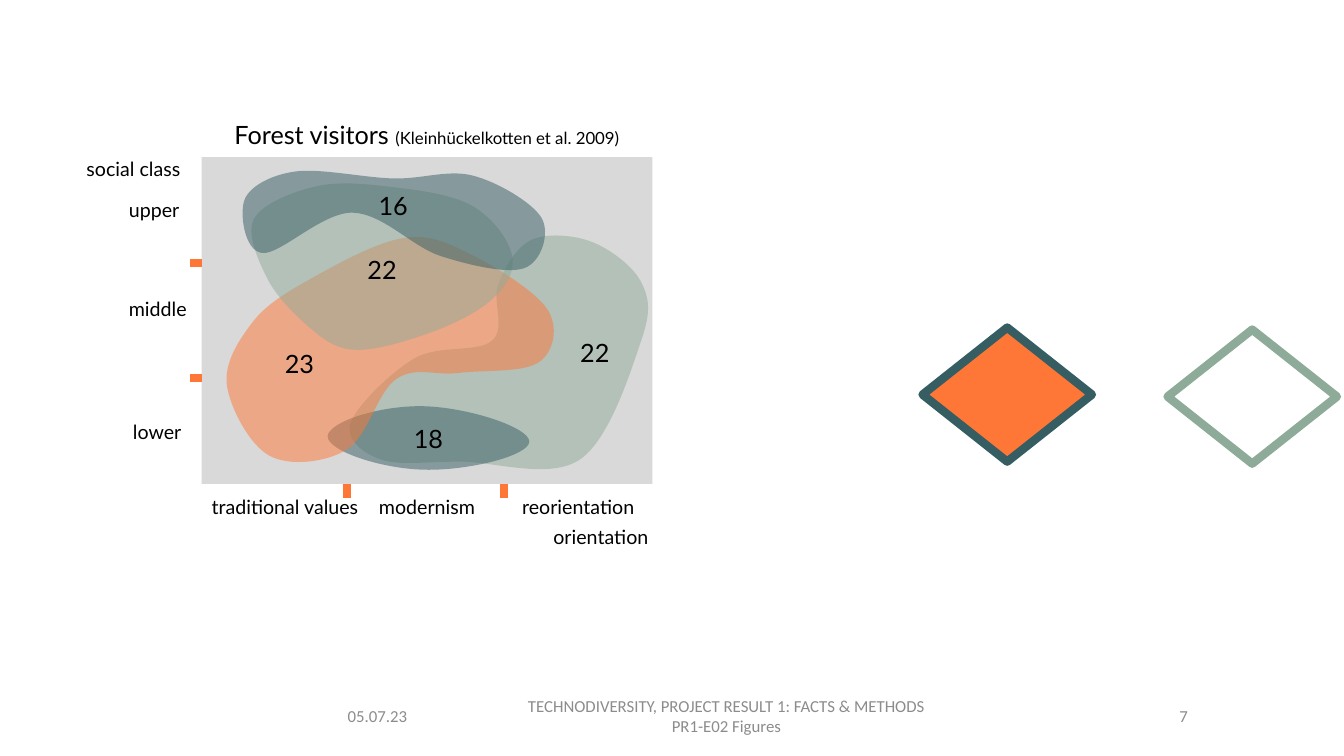
from dataclasses import dataclass

import lxml.etree
import pptx
import pptx.dml.color
import pptx.enum.shapes
import pptx.enum.text
import pptx.oxml.ns
import pptx.util

COLUMNS, ROWS = 1333, 750
STEP = pptx.util.Inches(0.01)
ORANGE, TEAL, SAGE = "FF7737", "355D62", "8EAB99"
BLACK, WHITE, GREY, PANEL_GREY = "000000", "FFFFFF", "8C8C8C", "D9D9D9"
LEFT, TOP, WIDTH, HEIGHT = 200, 156, 447, 324
AXIS_ROW = 486
ALIGN = pptx.enum.text.PP_ALIGN
ANCHOR = pptx.enum.text.MSO_ANCHOR
SHAPE = pptx.enum.shapes.MSO_SHAPE
Point = tuple[float, float]


@dataclass
class Label:
    text: str
    column: int
    row: int
    width: int = 167
    height: int = 34
    size: int = 14
    font: str = "Lato"
    color: str = BLACK
    align: ALIGN = ALIGN.LEFT
    anchor: ANCHOR = ANCHOR.TOP


@dataclass
class Region:
    number: str
    center: Point
    color: str
    knots: list[Point]
    tension: float = 6


@dataclass
class Block:
    shape: SHAPE
    column: int
    row: int
    width: int
    height: int
    fill: str
    line: str | None = None


@dataclass
class Tick:
    column: int
    row: int
    across: int
    down: int


def steps(count: float) -> pptx.util.Emu:
    return pptx.util.Emu(round(count * STEP))


def color(code: str) -> pptx.dml.color.RGBColor:
    return pptx.dml.color.RGBColor.from_string(code)


def tag(name: str) -> str:
    return pptx.oxml.ns.qn(name)


def style_paragraph(para, size: int, font: str, code: str, align) -> None:
    para.alignment = align
    para.font.size = pptx.util.Pt(size)
    para.font.name = font
    para.font.color.rgb = color(code)


def draw_label(page, label: Label) -> None:
    box = page.shapes.add_textbox(
        steps(label.column), steps(label.row), steps(label.width), steps(label.height))
    frame = box.text_frame
    frame.word_wrap = True
    frame.vertical_anchor = label.anchor
    frame.text = label.text
    for para in frame.paragraphs:
        style_paragraph(para, label.size, label.font, label.color, label.align)


def draw_block(page, block: Block) -> None:
    shape = page.shapes.add_shape(
        block.shape, steps(block.column), steps(block.row),
        steps(block.width), steps(block.height))
    shape.shadow.inherit = False
    shape.fill.solid()
    shape.fill.fore_color.rgb = color(block.fill)
    if block.line:
        shape.line.color.rgb = color(block.line)
        shape.line.width = pptx.util.Pt(6)
    else:
        shape.line.fill.background()


def smooth_points(knots: list[Point], tension: float) -> list[Point]:
    points = []
    for index, start in enumerate(knots):
        before = knots[index - 1]
        end = knots[(index + 1) % len(knots)]
        after = knots[(index + 2) % len(knots)]
        points.append(tuple(s + (e - b) / tension for b, s, e in zip(before, start, end)))
        points.append(tuple(e - (a - s) / tension for s, e, a in zip(start, end, after)))
        points.append(end)
    return points


def curve_outline(shape) -> None:
    edges = list(shape.element.iter(tag("a:lnTo")))
    for group in zip(*[iter(edges)] * 3):
        curve = lxml.etree.Element(tag("a:cubicBezTo"))
        group[0].addprevious(curve)
        for edge in group:
            curve.append(edge[0])
            edge.getparent().remove(edge)


def draw_region(page, region: Region) -> None:
    builder = page.shapes.build_freeform(*region.knots[0], scale=STEP)
    builder.add_line_segments(smooth_points(region.knots, region.tension))
    shape = builder.convert_to_shape()
    curve_outline(shape)
    shape.shadow.inherit = False
    shape.line.fill.background()
    shape.fill.solid()
    shape.fill.fore_color.rgb = color(region.color)
    tint = next(shape.element.spPr.iter(tag("a:srgbClr")))
    lxml.etree.SubElement(tint, tag("a:alpha"), val="50000")

    across = 2 * steps(region.center[0]) - 2 * shape.left - shape.width
    down = 2 * steps(region.center[1]) - 2 * shape.top - shape.height
    frame = shape.text_frame
    frame.margin_left, frame.margin_right = max(across, 0), max(-across, 0)
    frame.margin_top, frame.margin_bottom = max(down, 0), max(-down, 0)
    frame.vertical_anchor = ANCHOR.MIDDLE
    frame.text = region.number
    style_paragraph(frame.paragraphs[0], 18, "Lato", BLACK, ALIGN.CENTER)


def draw_tick(page, tick: Tick) -> None:
    line = page.shapes.add_connector(
        pptx.enum.shapes.MSO_CONNECTOR.STRAIGHT, steps(tick.column), steps(tick.row),
        steps(tick.column + tick.across), steps(tick.row + tick.down))
    line.line.color.rgb = color(ORANGE)
    line.line.width = pptx.util.Pt(6)
    lxml.etree.SubElement(line.element.spPr, tag("a:effectLst"))


def draw_title(page) -> None:
    title = page.shapes.title
    title.left, title.top = steps(LEFT), steps(113)
    title.width, title.height = steps(WIDTH), steps(40)
    frame = title.text_frame
    frame.auto_size = pptx.enum.text.MSO_AUTO_SIZE.NONE
    frame.vertical_anchor = ANCHOR.TOP
    para = frame.paragraphs[0]
    style_paragraph(para, 18, "Lato", BLACK, ALIGN.CENTER)
    for text, size in (("Forest visitors ", 18), ("(Kleinhückelkotten et al. 2009)", 12)):
        span = para.add_run()
        span.text = text
        span.font.size = pptx.util.Pt(size)


LABELS = [
    Label("social class", 76, 151), Label("upper", 118, 191),
    Label("middle", 118, 290), Label("lower", 122, 412),
    Label("traditional values", LEFT, AXIS_ROW), Label("modernism", 366, AXIS_ROW),
    Label("reorientation", 508, AXIS_ROW), Label("orientation", 539, 516),
]
FOOTERS = [
    ("05.07.23", 335, 134, ALIGN.LEFT),
    ("TECHNODIVERSITY, PROJECT RESULT 1: FACTS & METHODS\nPR1-E02 Figures",
     486, 469, ALIGN.CENTER),
    ("7", 977, 211, ALIGN.RIGHT),
]
REGIONS = [
    Region("22", (590, 350), SAGE, [
        (412, 355), (348, 419), (378, 456), (457, 458), (575, 456), (636, 338),
        (636, 280), (587, 240), (527, 238), (494, 283), (488, 338)]),
    Region("18", (425, 435), TEAL, [
        (420, 403), (325, 433), (421, 466), (525, 438)], 4.5),
    Region("23", (297, 361), ORANGE, [
        (251, 319), (311, 275), (401, 236), (470, 254), (543, 307), (535, 359),
        (455, 370), (393, 376), (344, 446), (267, 452), (225, 382)]),
    Region("22", (379, 267), SAGE, [
        (265, 276), (252, 217), (313, 185), (384, 185), (468, 204), (508, 254),
        (488, 297), (424, 331), (352, 347), (306, 324)]),
    Region("16", (390, 204), TEAL, [
        (243, 197), (294, 170), (389, 177), (468, 174), (537, 216), (520, 266),
        (437, 254), (350, 211), (260, 251)]),
]
PANEL = Block(SHAPE.RECTANGLE, LEFT, TOP, WIDTH, HEIGHT, PANEL_GREY)
DIAMONDS = [
    Block(SHAPE.DIAMOND, 1158, 327, 168, 133, WHITE, SAGE),
    Block(SHAPE.DIAMOND, 915, 325, 168, 133, ORANGE, TEAL),
]
TICKS = [Tick(LEFT, row, -12, 0) for row in (375, 261)]
TICKS += [Tick(column, TOP + HEIGHT, 0, 14) for column in (344, 500)]


def main() -> None:
    deck = pptx.Presentation()
    deck.slide_width, deck.slide_height = steps(COLUMNS), steps(ROWS)
    page = deck.slides.add_slide(deck.slide_layouts[5])
    draw_title(page)
    for text, column, width, align in FOOTERS:
        draw_label(page, Label(text, column, 690, width, 40, 12, "Calibri", GREY,
                               align, ANCHOR.MIDDLE))
    draw_block(page, PANEL)
    for draw, items in ((draw_label, LABELS), (draw_region, REGIONS),
                        (draw_block, DIAMONDS), (draw_tick, TICKS)):
        for item in items:
            draw(page, item)
    deck.save("out.pptx")


if __name__ == "__main__":
    main()
